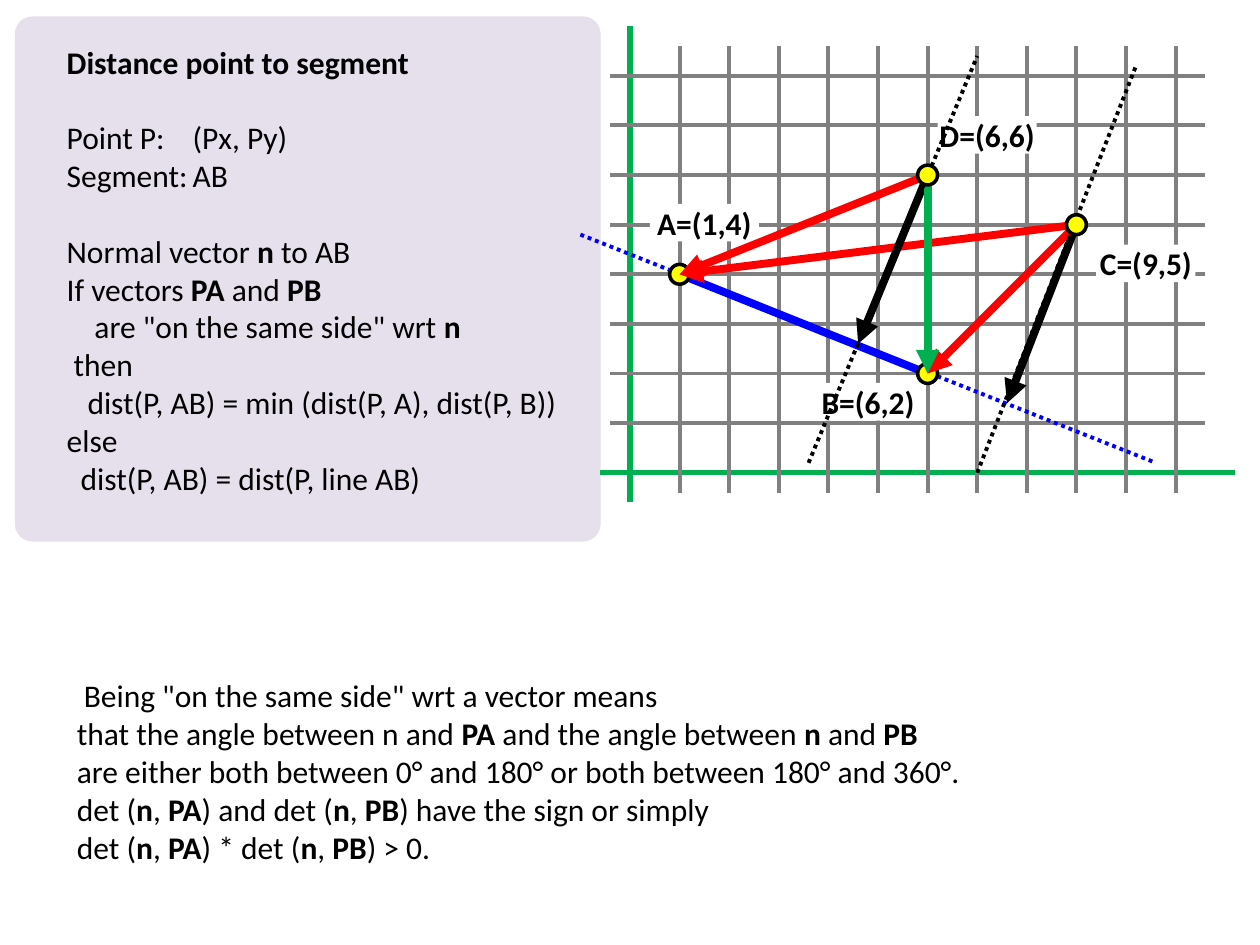
from lxml import etree
from pptx import Presentation
from pptx.dml.color import RGBColor
from pptx.enum import dml, shapes, text
from pptx.oxml import ns
from pptx.util import Cm, Pt

BLACK, WHITE, GRAY = "000000", "FFFFFF", "808080"
GREEN, BLUE, RED = "00B050", "0000FF", "FF0000"
YELLOW, LILAC = "FFFF00", "E6E0EC"
SPACE = 0.14  # width of one indent step in cm

# Points on the 1 cm grid
A, B, C, D = (1, 4), (6, 2), (9, 5), (6, 6)
FOOT_C, FOOT_D = (7.6, 1.4), (4.6, 2.6)

# Each line: indent steps, gap above in points, text with _bold_ parts
RULE = [
    (0, 0, "Point P:\t(Px, Py)"),
    (0, 0, "Segment:\tAB"),
    (0, 21.6, "Normal vector _n_ to AB"),
    (0, 0, "If vectors _PA_ and _PB_"),
    (4, 0, 'are "on the same side" wrt _n_'),
    (1, 0, "then"),
    (3, 0, "dist(P, AB) = min (dist(P, A), dist(P, B))"),
    (0, 0, "else"),
    (2, 0, "dist(P, AB) = dist(P, line AB)"),
]
NOTE = [
    (1, 0, 'Being "on the same side" wrt a vector means'),
    (0, 0, "that the angle between n and _PA_ and the angle between _n_ and _PB_"),
    (0, 0, "are either both between 0° and 180° or both between 180° and 360°."),
    (0, 0, "det (_n_, _PA_) and det (_n_, _PB_) have the sign or simply"),
    (0, 0, "det (_n_, _PA_) * det (_n_, _PB_) > 0."),
]


def tint(code):
    return RGBColor.from_string(code)


def spot(point):
    """Slide position of a grid point."""
    return Cm(12.7 + point[0]), Cm(9.53 - point[1])


def place(shape, left, top, width, height):
    shape.left, shape.top = Cm(left), Cm(top)
    shape.width, shape.height = Cm(width), Cm(height)


def write(shape, lines, align="LEFT", anchor="TOP", inset=None, tab=None):
    """Fill a shape with lines of text; parts between underscores are bold."""
    frame = shape.text_frame
    frame.word_wrap = True
    frame.auto_size = text.MSO_AUTO_SIZE.NONE
    frame.vertical_anchor = getattr(text.MSO_ANCHOR, anchor)
    if inset is not None:
        frame.margin_left = frame.margin_right = Cm(inset)
        frame.margin_top = frame.margin_bottom = Cm(inset)
    for i, (steps, gap, line) in enumerate(lines):
        para = frame.add_paragraph() if i else frame.paragraphs[0]
        para.alignment = getattr(text.PP_ALIGN, align)
        para.space_before = Pt(gap)
        props = para._p.get_or_add_pPr()
        props.set("marL", str(Cm(steps * SPACE)))
        props.set("indent", "0")
        etree.SubElement(props, ns.qn("a:buNone"))
        if tab:
            stops = etree.SubElement(props, ns.qn("a:tabLst"))
            etree.SubElement(stops, ns.qn("a:tab"), pos=str(Cm(tab)), algn="l")
        for j, part in enumerate(line.split("_")):
            if part:
                run = para.add_run()
                run.text = part
                font = run.font
                font.name, font.size, font.bold = "Calibri", Pt(18), j % 2 == 1
                font.color.rgb = tint(BLACK)


def block(slide, kind, left, top, width, height, fill, edge=None):
    shape = slide.shapes.add_shape(kind, left, top, width, height)
    shape.shadow.inherit = False
    shape.fill.solid()
    shape.fill.fore_color.rgb = tint(fill)
    if edge:
        shape.line.color.rgb = tint(edge)
        shape.line.width = Pt(2)
    else:
        shape.line.fill.background()
    return shape


def stroke(slide, start, end, color, width=2.25, dots=False, arrow=False):
    """Line between two grid points."""
    link = slide.shapes.add_connector(
        shapes.MSO_CONNECTOR.STRAIGHT, *spot(start), *spot(end))
    link.line.color.rgb = tint(color)
    link.line.width = Pt(width)
    if dots:
        link.line.dash_style = dml.MSO_LINE.ROUND_DOT
    props = link.element.spPr
    if arrow:
        etree.SubElement(props.find(ns.qn("a:ln")), ns.qn("a:tailEnd"),
                         type="triangle")
    etree.SubElement(props, ns.qn("a:effectLst"))


def node(slide, point):
    x, y = spot(point)
    block(slide, shapes.MSO_SHAPE.OVAL, x - Cm(0.2), y - Cm(0.2),
          Cm(0.4), Cm(0.4), YELLOW, BLACK)


def label(slide, words, corner, width=2):
    box = block(slide, shapes.MSO_SHAPE.RECTANGLE, *spot(corner),
                Cm(width), Cm(0.76), WHITE)
    write(box, [(0, 0, f"_{words}_")], align="CENTER", anchor="MIDDLE", inset=0)


def grid(slide):
    stroke(slide, (-0.6, 0), (12.2, 0), GREEN, 3)
    stroke(slide, (0, -0.6), (0, 9), GREEN, 3)
    for x in range(1, 12):
        stroke(slide, (x, -0.4), (x, 8.6), GRAY)
    for y in range(1, 9):
        stroke(slide, (-0.4, y), (11.6, y), GRAY)


def panel(slide):
    """Lilac card with heading and rule."""
    title, body = slide.shapes.title, slide.placeholders[1]
    card = block(slide, shapes.MSO_SHAPE.ROUNDED_RECTANGLE,
                 Cm(0.3), Cm(0.33), Cm(11.81), Cm(10.59), LILAC)
    card.adjustments[0] = 0.034
    title.element.addprevious(card.element)
    place(title, 1.09, 0.74, 10.8, 1.02)
    write(title, [(0, 0, "_Distance point to segment_")])
    place(body, 1.09, 2.26, 10.8, 7.98)
    write(body, RULE, tab=2.7)


def figure(slide):
    label(slide, "A=(1,4)", (0.4, 5.42), 2.2)
    label(slide, "B=(6,2)", (3.8, 1.81))
    label(slide, "D=(6,6)", (6.2, 7.19))
    # Segment and its line
    stroke(slide, A, B, BLUE, 4.5)
    stroke(slide, (-1, 4.8), (10.6, 0.2), BLUE, dots=True)
    node(slide, A)
    node(slide, B)
    # Vectors from C and D
    for start, end, color in [(C, FOOT_C, BLACK), (C, B, RED), (C, A, RED),
                              (D, FOOT_D, BLACK), (D, B, GREEN), (D, A, RED)]:
        stroke(slide, start, end, color, 4.5, arrow=True)
    # Normals through C and D
    stroke(slide, (7, 0), (10.2, 8.2), BLACK, dots=True)
    label(slide, "C=(9,5)", (9.4, 4.6))
    node(slide, C)
    stroke(slide, (3.6, 0.2), (7, 8.4), BLACK, dots=True)
    node(slide, D)


def main():
    deck = Presentation()
    deck.slide_width, deck.slide_height = Cm(25.4), Cm(19.05)
    slide = deck.slides.add_slide(deck.slide_layouts[1])
    panel(slide)
    grid(slide)
    figure(slide)
    # Explanation below
    note = slide.shapes.add_textbox(Cm(1.3), Cm(13.51), Cm(22.2), Cm(4.11))
    write(note, NOTE)
    deck.save("out.pptx")


if __name__ == "__main__":
    main()
